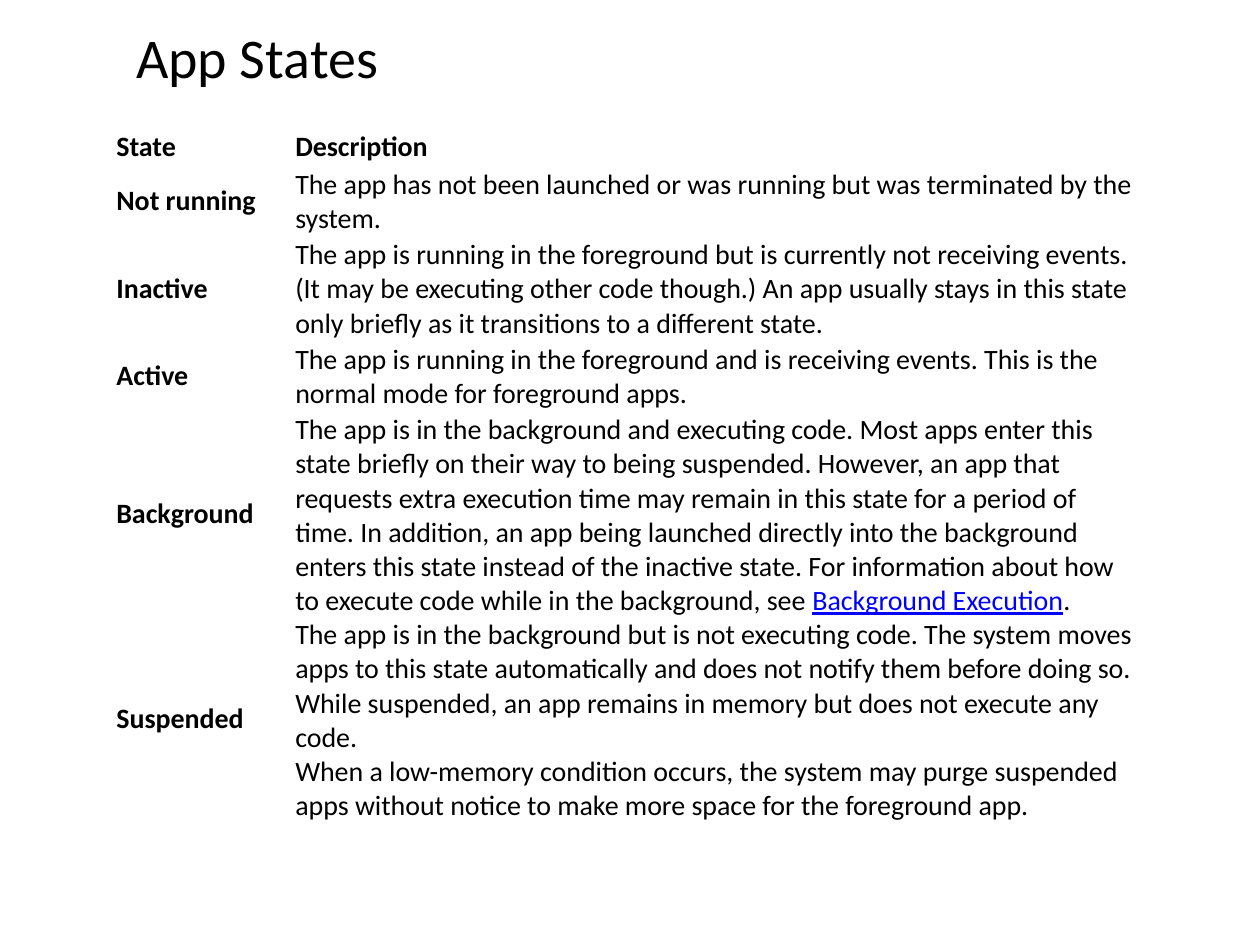
"""Build the App States slide: a title above a table of states and descriptions."""
import pptx
import pptx.util
import pptx.dml.color
import pptx.enum.text

Inches, Pt = pptx.util.Inches, pptx.util.Pt
BLACK = pptx.dml.color.RGBColor(0x00, 0x00, 0x00)
LINK_BLUE = pptx.dml.color.RGBColor(0x00, 0x00, 0xFF)
FONT = "Calibri"
LINK = "Background Execution"
CELL_MARGIN = Inches(1 / 72)

ROWS = [
    (0.13, "State", ["Description"]),
    (0.33, "Not running", [
        "The app has not been launched or was running but was terminated by the system."]),
    (0.72, "Inactive", [
        "The app is running in the foreground but is currently not receiving events. "
        "(It may be executing other code though.) An app usually stays in this state "
        "only briefly as it transitions to a different state."]),
    (0.43, "Active", [
        "The app is running in the foreground and is receiving events. "
        "This is the normal mode for foreground apps."]),
    (1.52, "Background", [
        "The app is in the background and executing code. Most apps enter this state "
        "briefly on their way to being suspended. However, an app that requests extra "
        "execution time may remain in this state for a period of time. In addition, an "
        "app being launched directly into the background enters this state instead of "
        "the inactive state. For information about how to execute code while in the "
        "background, see Background Execution."]),
    (1.32, "Suspended", [
        "The app is in the background but is not executing code. The system moves apps "
        "to this state automatically and does not notify them before doing so. While "
        "suspended, an app remains in memory but does not execute any code.",
        "When a low-memory condition occurs, the system may purge suspended apps "
        "without notice to make more space for the foreground app."]),
]


def format_run(r, size, color=BLACK, bold=False):
    r.font.name = FONT
    r.font.size = Pt(size)
    r.font.bold = bold
    r.font.color.rgb = color


def fill_cell(cell, paragraphs, bold):
    cell.fill.background()
    cell.vertical_anchor = pptx.enum.text.MSO_ANCHOR.MIDDLE
    cell.margin_left = cell.margin_right = CELL_MARGIN
    cell.margin_top = cell.margin_bottom = CELL_MARGIN
    tf = cell.text_frame
    for i, text in enumerate(paragraphs):
        p = tf.add_paragraph() if i else tf.paragraphs[0]
        before, link, after = text.partition(LINK)
        for part in filter(None, (before, link, after)):
            r = p.add_run()
            r.text = part
            format_run(r, 16, LINK_BLUE if part == LINK else BLACK, bold)
            if part == LINK:
                r.font.underline = True


prs = pptx.Presentation()
prs.slide_width, prs.slide_height = Inches(10), Inches(7.5)
s = prs.slides.add_slide(prs.slide_layouts[5])

title = s.shapes.title
title.left, title.top = Inches(0.98), Inches(0.13)
title.width, title.height = Inches(7.17), Inches(0.64)
tf = title.text_frame
tf.text = "App States"
tf.word_wrap = True
tf.auto_size = pptx.enum.text.MSO_AUTO_SIZE.SHAPE_TO_FIT_TEXT
tf.vertical_anchor = pptx.enum.text.MSO_ANCHOR.TOP
p = tf.paragraphs[0]
p.alignment = pptx.enum.text.PP_ALIGN.LEFT
format_run(p.runs[0], 32)

table = s.shapes.add_table(
    len(ROWS), 2, Inches(0.91), Inches(1.02), Inches(8.11), Inches(5.5)).table
table.first_row = table.horz_banding = False
table.columns[0].width, table.columns[1].width = Inches(1.42), Inches(6.69)
for i, (height, state, description) in enumerate(ROWS):
    table.rows[i].height = Inches(height)
    fill_cell(table.cell(i, 0), [state], True)
    fill_cell(table.cell(i, 1), description, i == 0)

prs.save("out.pptx")
